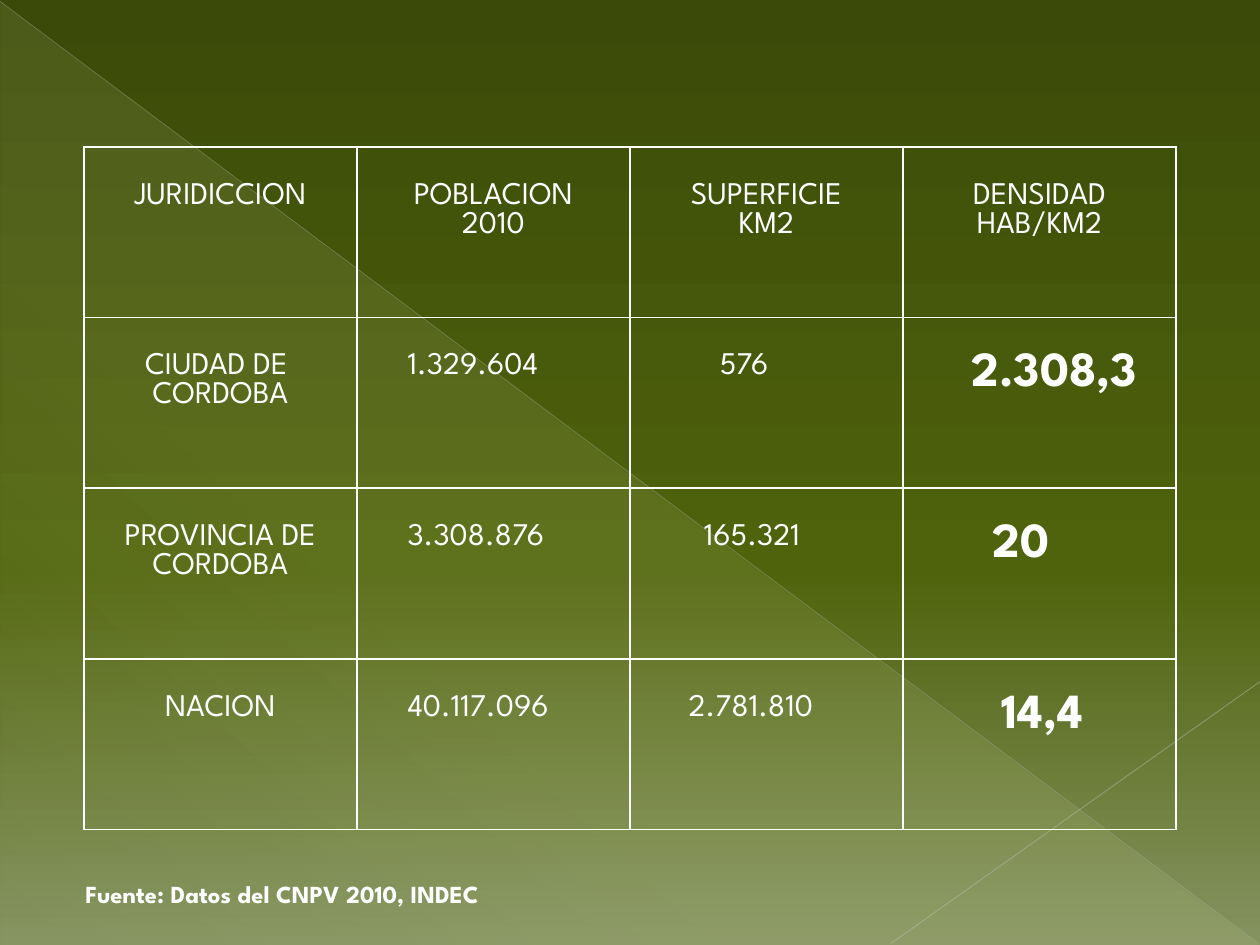
from typing import NamedTuple

from lxml.etree import SubElement
from pptx import Presentation
from pptx.dml.color import RGBColor
from pptx.enum.shapes import MSO_CONNECTOR, MSO_SHAPE
from pptx.enum.text import PP_ALIGN
from pptx.oxml.ns import qn
from pptx.util import Cm, Pt

FONT = "League Spartan"
WHITE = "FFFFFF"


class Stop(NamedTuple):
    pos: int
    color: str
    opacity: int = 100


class Ray(NamedTuple):
    start: tuple[float, float]
    end: tuple[float, float]
    color: str
    width: float
    opacity: int


class Entry(NamedTuple):
    text: str
    left: float = 0.25  # left inset in cm
    centered: bool = True
    size: int = 18
    bold: bool = False


def rgb(color: str) -> RGBColor:
    return RGBColor.from_string(color)


def set_opacity(clr, percent: int) -> None:
    if percent < 100:
        SubElement(clr, qn("a:alpha"), val=str(percent * 1000))


def set_gradient(holder, stops: list[Stop], angle: int) -> None:
    """Turn the solid fill inside holder into a linear gradient."""
    solid = holder.find(qn("a:solidFill"))
    grad = solid.makeelement(qn("a:gradFill"), {"rotWithShape": "1"})
    gs_list = SubElement(grad, qn("a:gsLst"))
    for stop in stops:
        gs = SubElement(gs_list, qn("a:gs"), pos=str(stop.pos * 1000))
        set_opacity(SubElement(gs, qn("a:srgbClr"), val=stop.color), stop.opacity)
    SubElement(grad, qn("a:lin"), ang=str(angle * 60000), scaled="0")
    holder.replace(solid, grad)


def add_ray(slide, ray: Ray) -> None:
    ends = [Cm(v) for v in ray.start + ray.end]
    line = slide.shapes.add_connector(MSO_CONNECTOR.STRAIGHT, *ends)
    line.line.width = Pt(ray.width)
    line.line.color.rgb = rgb(ray.color)
    sp_pr = line._element.spPr
    set_opacity(sp_pr.find(".//" + qn("a:srgbClr")), ray.opacity)
    SubElement(sp_pr, qn("a:effectLst"))


def format_text(tf, size: int, bold: bool, align: PP_ALIGN) -> None:
    for p in tf.paragraphs:
        p.alignment = align
        for r in p.runs:
            r.font.name = FONT
            r.font.size = Pt(size)
            r.font.bold = bold
            r.font.color.rgb = rgb(WHITE)


def set_borders(cell) -> None:
    tc_pr = cell._tc.get_or_add_tcPr()
    for i, side in enumerate(("lnL", "lnR", "lnT", "lnB")):
        ln = tc_pr.makeelement(qn(f"a:{side}"), {"w": str(Pt(1))})
        SubElement(SubElement(ln, qn("a:solidFill")), qn("a:srgbClr"), val=WHITE)
        tc_pr.insert(i, ln)


def fill_cell(cell, entry: Entry) -> None:
    cell.text_frame.text = entry.text
    cell.margin_left = Cm(entry.left)
    cell.margin_top = Cm(0.71)
    cell.fill.background()
    set_borders(cell)
    align = PP_ALIGN.CENTER if entry.centered else PP_ALIGN.LEFT
    format_text(cell.text_frame, entry.size, entry.bold, align)


def figure(text: str, left: float) -> Entry:
    return Entry(text, left, centered=False)


def density(text: str, left: float, centered: bool = True) -> Entry:
    return Entry(text, left, centered, size=28, bold=True)


BACKGROUND = [Stop(0, "3B4A09"), Stop(60, "4F630C"), Stop(100, "849360")]
SHEEN = [Stop(0, "FEFAC9", 10), Stop(70, "FEFAC9", 8), Stop(100, "FEFAC9", 1)]
RAYS = [
    Ray((0, 0.03), (25.37, 19.02), "BABDB3", 0.39, 35),
    Ray((25.4, 13.74), (17.96, 19.02), "C1C4BC", 0.47, 45),
]
ROWS = [
    [Entry("JURIDICCION"), Entry("POBLACION\n2010"),
     Entry("SUPERFICIE\nKM2"), Entry("DENSIDAD\nHAB/KM2")],
    [Entry("CIUDAD DE \nCORDOBA"), figure("1.329.604", 1.02),
     figure("576", 1.81), density("2.308,3", 0.84)],
    [Entry("PROVINCIA DE CORDOBA"), figure("3.308.876", 1.02),
     figure("165.321", 1.49), density("20", 1.8, centered=False)],
    [Entry("NACION"), figure("40.117.096", 1.02),
     figure("2.781.810", 1.18), density("14,4", 0.36)],
]


def main() -> None:
    prs = Presentation()
    prs.slide_width, prs.slide_height = Cm(25.4), Cm(19.05)
    slide = prs.slides.add_slide(prs.slide_layouts[6])

    # Background with sheen and rays
    slide.background.fill.solid()
    slide.background.fill.fore_color.rgb = rgb(WHITE)
    set_gradient(slide.element.find(".//" + qn("p:bgPr")), BACKGROUND, 90)
    sp = slide.shapes.add_shape(
        MSO_SHAPE.RIGHT_TRIANGLE, Cm(0.02), Cm(0.04), Cm(25.36), Cm(19))
    sp.shadow.inherit = False
    sp.line.fill.background()
    sp.fill.solid()
    sp.fill.fore_color.rgb = rgb(WHITE)
    set_gradient(sp._element.spPr, SHEEN, 133)
    for ray in RAYS:
        add_ray(slide, ray)

    # Density table
    table = slide.shapes.add_table(
        len(ROWS), len(ROWS[0]), Cm(1.69), Cm(2.96), Cm(22.02), Cm(13.76)).table
    table.first_row = table.horz_banding = False
    for i, row in enumerate(ROWS):
        for j, entry in enumerate(row):
            fill_cell(table.cell(i, j), entry)

    # Data source
    box = slide.shapes.add_textbox(Cm(1.47), Cm(17.42), Cm(9.96), Cm(1.63))
    tf = box.text_frame
    tf.word_wrap = True
    tf.margin_top = Cm(0.3)
    tf.text = "Fuente: Datos del CNPV 2010, INDEC"
    format_text(tf, 14, True, PP_ALIGN.LEFT)

    prs.save("out.pptx")


if __name__ == "__main__":
    main()
